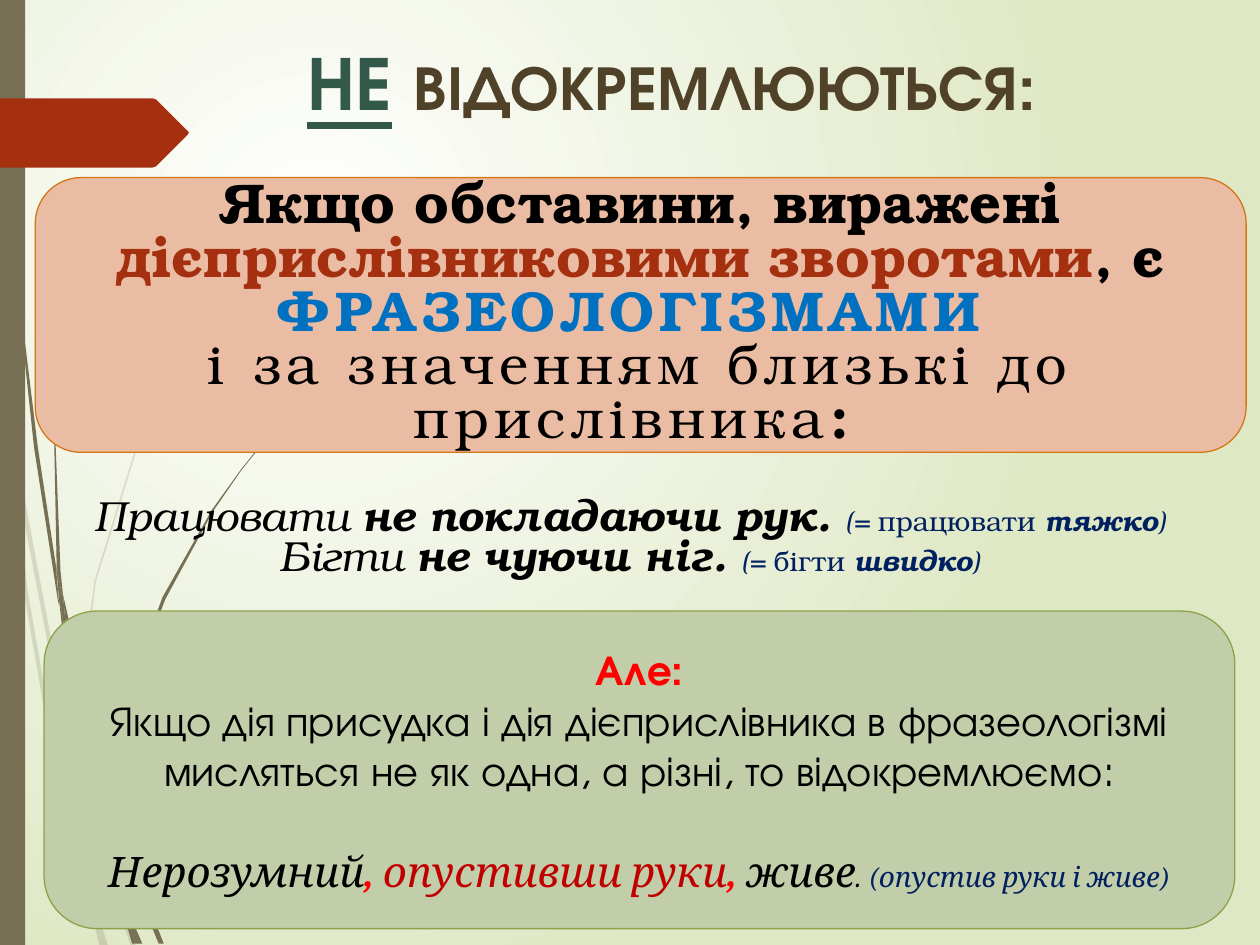
"""Build the slide on participial phrases that are not set off by commas."""
from lxml import etree
from pptx import Presentation
from pptx.dml.color import RGBColor
from pptx.enum.shapes import MSO_SHAPE
from pptx.enum.text import MSO_ANCHOR, PP_ALIGN
from pptx.oxml.ns import qn
from pptx.util import Inches, Pt

CENTER = PP_ALIGN.CENTER
MIDDLE = MSO_ANCHOR.MIDDLE
TOP = MSO_ANCHOR.TOP
RECTANGLE = MSO_SHAPE.RECTANGLE
ROUNDED = MSO_SHAPE.ROUNDED_RECTANGLE

WHITE = RGBColor(0xFF, 0xFF, 0xFF)
PALE_GREEN = RGBColor(0xDF, 0xE8, 0xC4)
TAUPE = RGBColor(0x76, 0x6F, 0x54)
RUST = RGBColor(0xA5, 0x30, 0x10)
PINE = RGBColor(0x32, 0x59, 0x49)
BROWN = RGBColor(0x50, 0x42, 0x28)
PEACH = RGBColor(0xEB, 0xBC, 0xA4)
ORANGE = RGBColor(0xD4, 0x78, 0x17)
SAGE = RGBColor(0xC2, 0xCE, 0xA9)
OLIVE = RGBColor(0x8B, 0xA2, 0x49)
BLACK = RGBColor(0, 0, 0)
RED = RGBColor(0xFF, 0, 0)
DARK_RED = RGBColor(0xC0, 0, 0)
BLUE = RGBColor(0, 0x70, 0xC0)
NAVY = RGBColor(0, 0x20, 0x60)

SANS = "TeX Gyre Adventor"
SLAB = "TeX Gyre Bonum"
SERIF = "Cambria"

FAINT_WISPS = [
    [(8, 350), (6, 322), (0, 282), (0, 299), (7, 344)],
    [(40, 522), (59, 599), (59, 586), (43, 520), (10, 345), (12, 376)],
    [(64, 607), (61, 596), (61, 610), (85, 694), (104, 751), (108, 751), (88, 692)],
    [(83, 751), (86, 751), (73, 711)],
    [(64, 683), (48, 619), (22, 469), (12, 376), (8, 350), (19, 470), (45, 621),
     (64, 693), (70, 714), (69, 707)],
    [(61, 584), (76, 462), (111, 349), (159, 245), (187, 198), (201, 175), (217, 154),
     (217, 153), (201, 175), (186, 197), (158, 244), (110, 348), (75, 461), (59, 584),
     (59, 586), (61, 596)],
    [(70, 714), (79, 751), (82, 751)],
    [(67, 692), (65, 683), (69, 707), (70, 714), (82, 751), (83, 751), (73, 711)],
]
DARK_WISPS = [
    [(5, 110), (14, 233), (27, 355), (46, 477), (47, 481), (45, 457), (45, 453),
     (30, 355), (15, 232), (6, 109), (4, 48), (3, 0), (2, 0), (3, 48)],
    [(73, 592), (88, 645), (88, 633), (88, 631), (77, 590), (50, 472), (53, 505)],
    [(94, 649), (91, 641), (91, 656), (109, 708), (126, 749), (130, 749), (113, 706)],
    [(91, 691), (81, 657), (60, 556), (53, 505), (47, 477), (56, 557), (77, 659),
     (92, 708), (97, 722), (96, 717)],
    [(50, 472), (48, 453), (44, 349), (48, 245), (52, 193), (58, 141), (51, 193),
     (47, 245), (43, 349), (45, 449), (49, 472)],
    [(110, 749), (113, 749), (100, 719)],
    [(47, 477), (53, 505), (50, 472), (49, 472), (45, 449), (45, 453)],
    [(91, 633), (103, 552), (131, 476), (169, 406), (191, 374), (203, 359), (216, 344),
     (215, 344), (203, 358), (191, 373), (168, 405), (129, 474), (101, 551), (88, 631),
     (91, 641)],
    [(97, 722), (105, 749), (108, 749)],
    [(96, 706), (91, 691), (96, 717), (97, 722), (108, 749), (110, 749), (100, 719)],
]
POINTER = [(149, 107), (124, 132), (121, 133), (0, 133), (0, 78), (121, 78),
           (124, 79), (149, 104), (150, 105)]

presentation = Presentation()
presentation.slide_width, presentation.slide_height = Inches(10), Inches(7.5)
slide = presentation.slides.add_slide(presentation.slide_layouts[6])
shapes = slide.shapes

backdrop = slide.background.fill
backdrop.gradient()
for stop, color, position in zip(backdrop.gradient_stops, (WHITE, PALE_GREEN), (0, 1)):
    stop.color.rgb = color
    stop.position = position
linear = next(slide.element.iter(qn("a:lin")))
radial = etree.Element(qn("a:path"), {"path": "circle"})
etree.SubElement(radial, qn("a:fillToRect"),
                 {"l": "50000", "t": "50000", "r": "100000", "b": "100000"})
linear.getparent().replace(linear, radial)


def paint(shape, fill, line=None):
    shape.shadow.inherit = False
    shape.fill.solid()
    shape.fill.fore_color.rgb = fill
    if line is None:
        shape.line.fill.background()
    else:
        shape.line.color.rgb = line
        shape.line.width = Pt(0.75)


def write(frame, paragraphs, base, line_spacing=1.0, anchor=MIDDLE):
    frame.word_wrap = True
    frame.vertical_anchor = anchor
    for index, runs in enumerate(paragraphs):
        paragraph = frame.paragraphs[0] if index == 0 else frame.add_paragraph()
        paragraph.alignment = CENTER
        paragraph.line_spacing = line_spacing
        for text, changes in runs:
            run = paragraph.add_run()
            run.text = text
            for name, value in {**base, **changes}.items():
                if name == "color":
                    run.font.color.rgb = value
                elif name == "spacing":
                    run.font._element.set("spc", str(value))
                else:
                    setattr(run.font, name, value)


for outlines, color, alpha in ((FAINT_WISPS, TAUPE, 20), (DARK_WISPS, TAUPE, 100),
                               ([POINTER], RUST, 100)):
    if color == RUST:
        side_band = shapes.add_shape(RECTANGLE, 0, 0, Inches(0.2), Inches(7.5))
        paint(side_band, TAUPE)
    for outline in outlines:
        builder = shapes.build_freeform(*outline[0], scale=Inches(0.01))
        builder.add_line_segments(outline[1:], close=True)
        ornament = builder.convert_to_shape()
        paint(ornament, color)
        if alpha < 100:
            tint = next(ornament._element.spPr.iter(qn("a:srgbClr")))
            etree.SubElement(tint, qn("a:alpha"), {"val": str(alpha * 1000)})

heading = shapes.add_textbox(Inches(1.54), Inches(0.22), Inches(7.72), Inches(1.4))
write(heading.text_frame, [[
    ("НЕ", {"size": Pt(44), "color": PINE, "underline": True}),
    (" ", {"size": Pt(44)}),
    ("ВІДОКРЕМЛЮЮТЬСЯ: ", {}),
]], {"name": SANS, "size": Pt(36), "bold": True, "color": BROWN}, anchor=TOP)

rule = shapes.add_shape(ROUNDED, Inches(0.28), Inches(1.41), Inches(9.61), Inches(2.18))
paint(rule, PEACH, ORANGE)
write(rule.text_frame, [
    [("Якщо обставини, виражені ", {}),
     ("дієприслівниковими зворотами", {"color": RUST}),
     (", є ", {}),
     ("ФРАЗЕОЛОГІЗМАМИ ", {"color": BLUE, "spacing": 300})],
    [("і за значенням близькі до прислівника", {"bold": False, "spacing": 300}),
     (": ", {})],
], {"name": SLAB, "size": Pt(32), "bold": True, "color": BLACK}, 0.8)

gloss = {"size": Pt(16), "color": NAVY}
examples = shapes.add_textbox(Inches(0.12), Inches(3.59), Inches(9.76), Inches(1.45))
examples.text_frame.margin_top = Inches(0.37)
write(examples.text_frame, [
    [(verb.capitalize() + " ", {}),
     (idiom + " ", {"bold": True}),
     ("(= ", gloss),
     (verb + " ", {**gloss, "italic": False}),
     (meaning, {**gloss, "bold": True}),
     (")", gloss)]
    for verb, idiom, meaning in (("працювати", "не покладаючи рук.", "тяжко"),
                                 ("бігти", "не чуючи ніг.", "швидко"))
], {"name": SLAB, "size": Pt(24), "bold": False, "italic": True, "color": BLACK}, 0.8, TOP)

quote = {"name": SERIF, "italic": True}
comma = {**quote, "bold": True, "color": RED}
exception = shapes.add_shape(ROUNDED, Inches(0.35), Inches(4.85), Inches(9.45), Inches(2.52))
paint(exception, SAGE, OLIVE)
write(exception.text_frame, [
    [("Але:", {"bold": True, "color": RED})],
    [("Якщо дія присудка і дія дієприслівника в фразеологізмі мисляться "
      "не як одна, а різні, то відокремлюємо:", {})],
    [("Нерозумний", quote),
     (", ", comma),
     ("опустивши руки", {**quote, "color": DARK_RED}),
     (",", comma),
     (" живе", quote),
     (". ", {**quote, "size": Pt(18)}),
     ("(опустив руки і живе)", {**quote, **gloss})],
], {"name": SANS, "size": Pt(24), "bold": False, "color": BLACK})
exception.text_frame.paragraphs[-1].space_before = Pt(29)

presentation.save("out.pptx")
